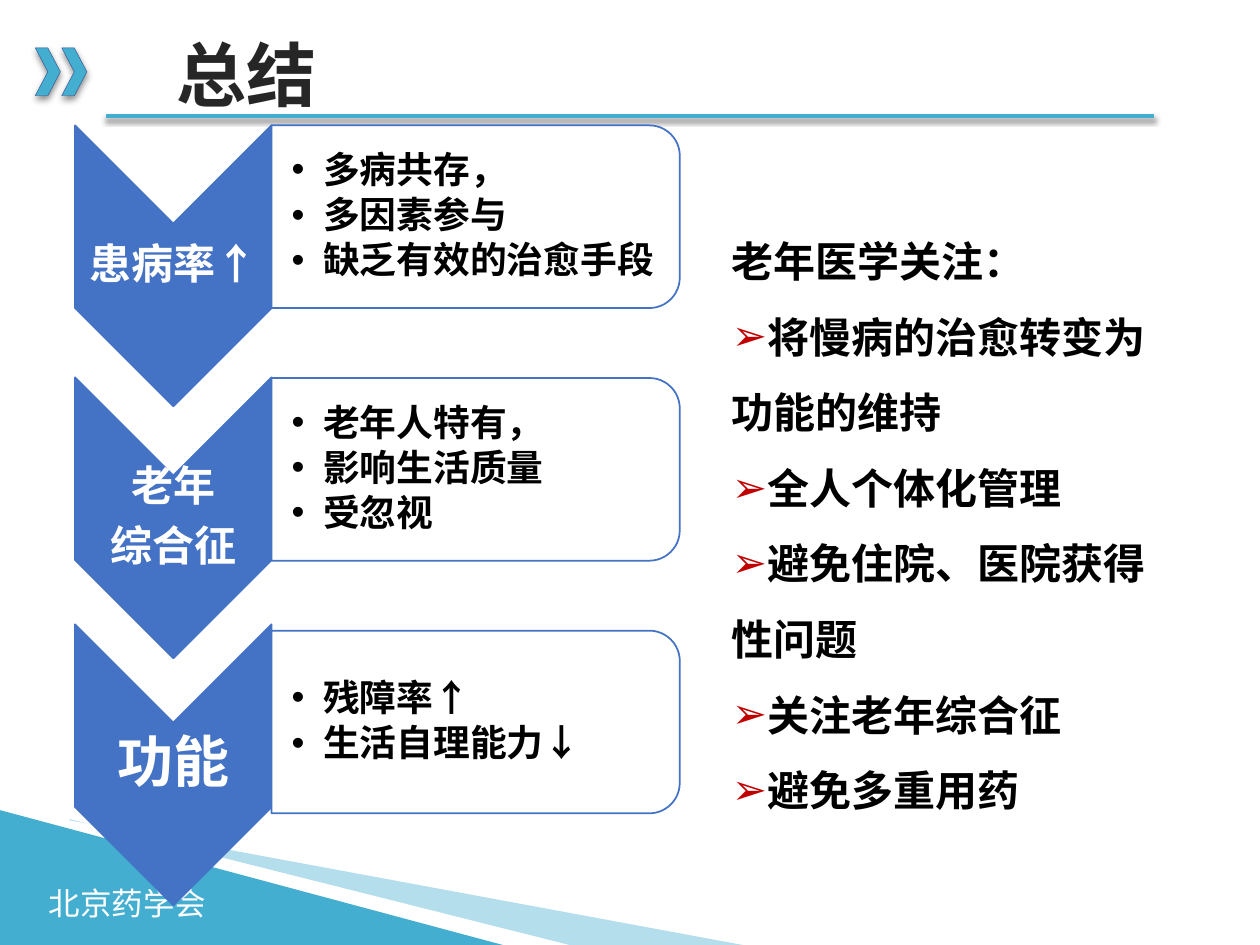
from lxml import etree
from pptx import Presentation
from pptx import util as u
from pptx.dml.color import RGBColor
from pptx.enum import shapes, text
from pptx.oxml.ns import qn

TEAL = RGBColor(0x44, 0xAE, 0xD0)
NAVY = RGBColor(0x32, 0x54, 0x91)
BLUE = RGBColor(0x44, 0x72, 0xC4)
RED = RGBColor(0xC0, 0x00, 0x00)
INK = RGBColor(0x26, 0x26, 0x26)
GREY = RGBColor(0x80, 0x80, 0x80)
BLACK = RGBColor(0, 0, 0)
WHITE = RGBColor(255, 255, 255)

SANS = "Noto Sans CJK SC"
KIND = shapes.MSO_SHAPE
MIDDLE = text.MSO_ANCHOR.MIDDLE
COLUMNS, ROWS = 100, 75
CELL = u.Inches(0.1)

# label lines, label size, top row of the arrow, top row of the panel, bullets
STAGES = [
    (["患病率↑"], 24, 9.95, 9.95, ["多病共存，", "多因素参与", "缺乏有效的治愈手段"]),
    (["老年", "综合征"], 24, 29.95, 30, ["老年人特有，", "影响生活质量", "受忽视"]),
    (["功能"], 32, 49.55, 50.05, ["残障率↑", "生活自理能力↓"]),
]
FOCUS = ["将慢病的治愈转变为功能的维持", "全人个体化管理", "避免住院、医院获得性问题",
         "关注老年综合征", "避免多重用药"]


def grid(*cells):
    return [u.Emu(round(cell * CELL)) for cell in cells]


def assign(target, values):
    for name, value in values.items():
        setattr(target, name, value)


def child(parent, tag, **attributes):
    return etree.SubElement(parent, qn(tag),
                            {key: str(value) for key, value in attributes.items()})


def set_alpha(fill_parent, percent):
    color = fill_parent.find(qn("a:solidFill")).find(qn("a:srgbClr"))
    child(color, "a:alpha", val=percent * 1000)


def add_shadow(shape, color, percent, blur, distance):
    effects = child(shape._element.spPr, "a:effectLst")
    shadow = child(effects, "a:outerShdw", blurRad=u.Pt(blur), dist=u.Pt(distance),
                   dir=90 * 60000, algn="ctr", rotWithShape=0)
    child(child(shadow, "a:srgbClr", val=color), "a:alpha", val=percent * 1000)


def paint(shape, fill, line=None, width=1, alpha=None):
    shape.fill.solid()
    shape.fill.fore_color.rgb = fill
    if alpha:
        set_alpha(shape._element.spPr, alpha)
    if line is None:
        shape.line.fill.background()
    else:
        shape.line.color.rgb = line
        shape.line.width = u.Pt(width)


def add_block(page, kind, area, adjust=None, shadow=False, turned=False, **look):
    """Draw a preset shape; a turned one covers its area after a quarter turn."""
    left, top, width, height = area
    if turned:
        left, top = left + (width - height) / 2, top + (height - width) / 2
        width, height = height, width
    block = page.shapes.add_shape(kind, *grid(left, top, width, height))
    block.rotation = 90 if turned else 0
    if adjust is not None:
        block.adjustments[0] = adjust
    paint(block, **look)
    if shadow:
        add_shadow(block, BLACK, 46, 4, 2)
    else:
        block.shadow.inherit = False


def set_bullet(para, mark, color=None, indent=0):
    properties = para._p.get_or_add_pPr()
    properties.set("marL", str(u.Inches(indent)))
    properties.set("indent", str(-u.Inches(indent)))
    if color is not None:
        child(child(properties, "a:buClr"), "a:srgbClr", val=color)
    child(properties, "a:buFont", typeface="Arial")
    child(properties, "a:buChar", char=mark)


def add_text(page, area, lines, font, para_format=None, frame_format=None, bullet=None,
             plain_lines=0):
    """Write one paragraph a line; bullets start after the plain lines."""
    box = page.shapes.add_textbox(*grid(*area))
    frame = box.text_frame
    assign(frame, {"word_wrap": True, **(frame_format or {})})
    for index, line in enumerate(lines):
        para = frame.paragraphs[0] if index == 0 else frame.add_paragraph()
        assign(para, para_format or {})
        if bullet and index >= plain_lines:
            set_bullet(para, **bullet)
        span = para.add_run()
        span.text = line
        values = dict(font)
        span.font.color.rgb = values.pop("color")
        assign(span.font, values)


def font_of(size, color, bold=True, name=SANS):
    return {"size": u.Pt(size), "color": color, "bold": bold, "name": name}


def insets(left, rest):
    return {"margin_left": u.Inches(left),
            **{f"margin_{side}": u.Inches(rest) for side in ("right", "top", "bottom")}}


def add_backdrop(page):
    rule = page.shapes.add_connector(shapes.MSO_CONNECTOR.STRAIGHT,
                                     *grid(91.6, 9.2, 8.4, 9.2))
    rule.line.color.rgb = TEAL
    rule.line.width = u.Pt(2.25)
    add_shadow(rule, GREY, 100, 3, 2)

    add_block(page, KIND.ISOSCELES_TRIANGLE, (0, 64.3, 39.9, 10.7), adjust=0, fill=TEAL)
    add_text(page, (2.9, 69.7, 14.6, 4), ["北京药学会"], font_of(18, WHITE, bold=False),
             frame_format={"word_wrap": False,
                           "auto_size": text.MSO_AUTO_SIZE.SHAPE_TO_FIT_TEXT})

    outline = page.shapes.build_freeform(*grid(5.5, 65.1))
    outline.add_line_segments([grid(59.5, 75.1), grid(45.6, 75.1), grid(5.5, 65)])
    beam = outline.convert_to_shape()
    paint(beam, TEAL, alpha=40)
    beam.shadow.inherit = False

    for left in (4.9, 2.8):
        add_block(page, KIND.CHEVRON, (left, 3.8, 2, 3.8), adjust=0.5, shadow=True,
                  fill=TEAL, line=NAVY, width=0.25)


def add_stage(page, label, size, arrow_top, panel_top, points):
    add_block(page, KIND.CHEVRON, (5.95, arrow_top, 15.6, 22.3), turned=True,
              fill=BLUE, line=BLUE)
    add_text(page, (5.95, arrow_top + 7.8, 15.6, 6.7), label, font_of(size, WHITE),
             {"alignment": text.PP_ALIGN.CENTER, "line_spacing": 0.9,
              "space_after": u.Pt(size * 0.35)},
             {"vertical_anchor": MIDDLE, **insets(0.02, 0.02)})
    add_block(page, KIND.ROUND_2_SAME_RECTANGLE, (21.55, panel_top, 32.4, 14.5),
              turned=True, fill=WHITE, line=BLUE, alpha=90)
    add_text(page, (21.55, panel_top + 0.7, 31.7, 13.1), points, font_of(21, BLACK),
             {"level": 1, "line_spacing": 0.9, "space_after": u.Pt(21 * 0.15)},
             {"vertical_anchor": MIDDLE, **insets(0.16, 0.01)},
             {"mark": "•", "indent": 0.25})


def main():
    deck = Presentation()
    deck.slide_width, deck.slide_height = grid(COLUMNS, ROWS)
    page = deck.slides.add_slide(deck.slide_layouts[6])
    add_backdrop(page)
    for stage in STAGES:
        add_stage(page, *stage)
    add_text(page, (57.1, 16.2, 37.8, 53.5), ["老年医学关注：", *FOCUS],
             font_of(24, BLACK, name="Arial"), {"line_spacing": 1.5},
             {"auto_size": text.MSO_AUTO_SIZE.SHAPE_TO_FIT_TEXT},
             {"mark": "➢", "color": RED}, plain_lines=1)
    add_text(page, (13, 0, 37.8, 12.5), ["总结"], font_of(40, INK),
             {"line_spacing": 0.9}, {"vertical_anchor": MIDDLE})
    deck.save("out.pptx")


if __name__ == "__main__":
    main()
